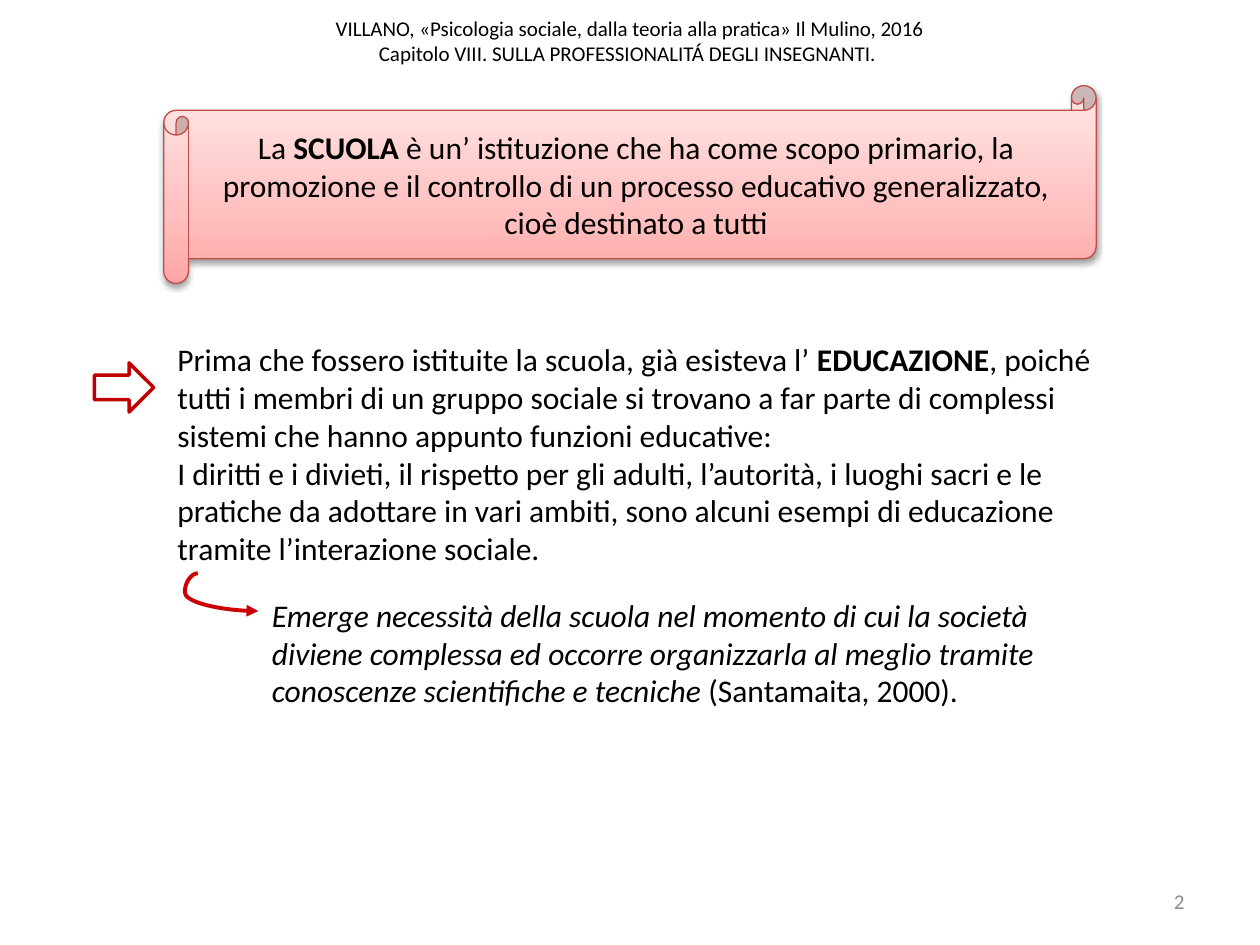
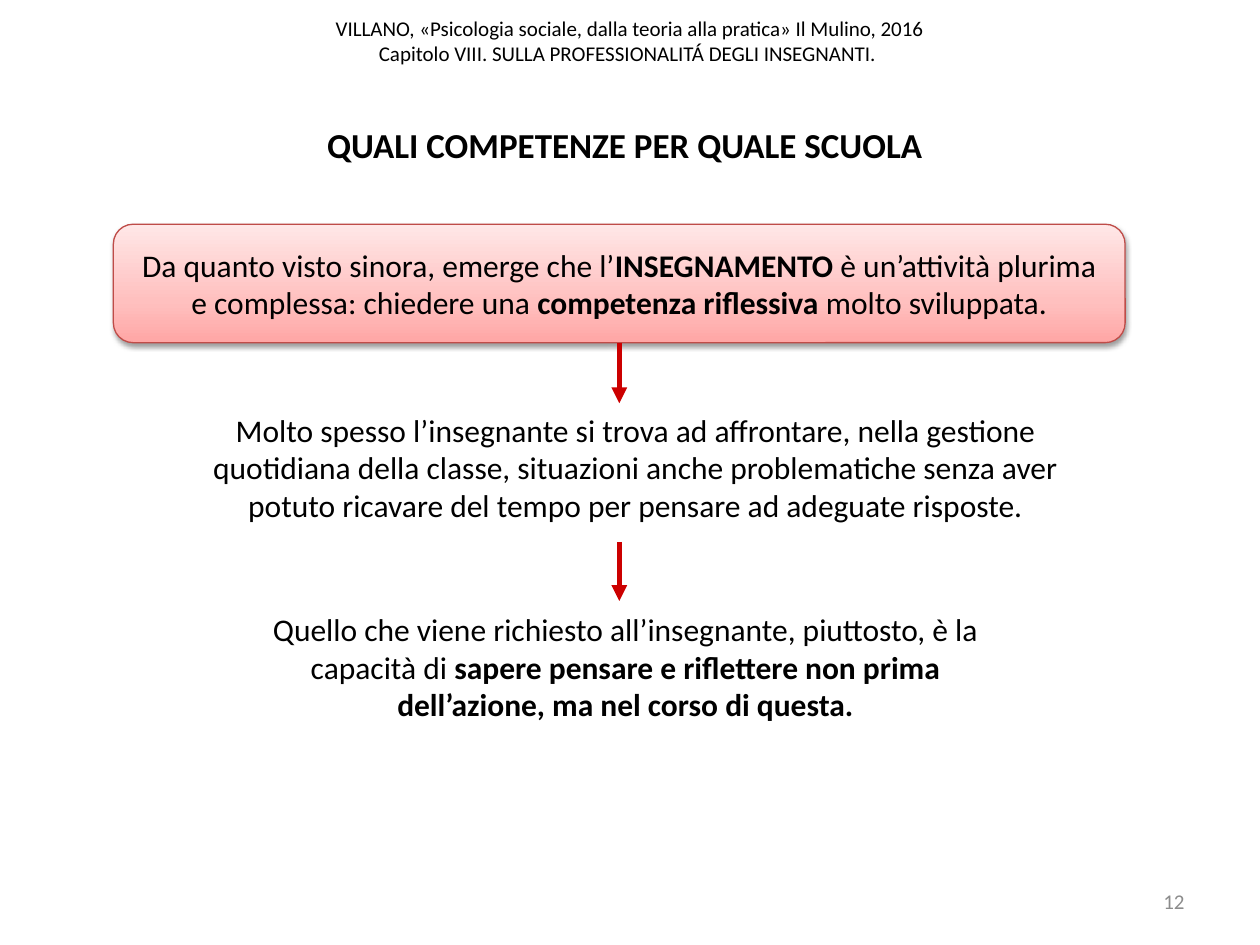
from copy import deepcopy

from pptx import Presentation
from pptx import util as u
from pptx.dml.color import RGBColor
from pptx.enum import shapes, text
from pptx.oxml import parse_xml
from pptx.oxml.ns import nsdecls, qn

BLACK, GREY, RED, DARK_RED, BORDER = "000000", "8C8C8C", "CC0000", "C00000", "BF4C48"
BANNER_STOPS = [(0, "FFA6A5"), (0.35, "FFC0BF"), (1, "FFE7E7")]
LEFT, CENTER, RIGHT = text.PP_ALIGN.LEFT, text.PP_ALIGN.CENTER, text.PP_ALIGN.RIGHT
HEADER = [
    ["VILLANO, «Psicologia sociale, dalla teoria alla pratica» Il Mulino, 2016"],
    ["Capitolo VIII. SULLA PROFESSIONALITÁ DEGLI INSEGNANTI. "],
]

deck = Presentation()
deck.slide_width, deck.slide_height = u.Inches(10), u.Inches(7.5)
# Grid of 100 columns by 75 rows
COL, ROW = deck.slide_width / 100, deck.slide_height / 75


def paint(target, color):
    """Give a fill, line fill or font a solid colour."""
    if hasattr(target, "solid"):
        target.solid()
        target.fore_color.rgb = RGBColor.from_string(color)
    else:
        target.color.rgb = RGBColor.from_string(color)


def write(box, paragraphs, size=18, color=BLACK, align=LEFT, accent="bold", middle=False):
    """Fill a box; every second span of a paragraph carries the accent."""
    frame = box.text_frame
    frame.word_wrap = True
    frame.vertical_anchor = text.MSO_ANCHOR.MIDDLE if middle else text.MSO_ANCHOR.TOP
    for number, spans in enumerate(paragraphs):
        para = frame.add_paragraph() if number else frame.paragraphs[0]
        para.alignment = align
        for index, content in enumerate(spans):
            if content:
                span = para.add_run()
                span.text = content
                span.font.name, span.font.size = "Calibri", u.Pt(size)
                paint(span.font, color)
                if index % 2:
                    setattr(span.font, accent, True)


# Pages with shared header and page number
pages = []
for page_number in ("2", "12"):
    page = deck.slides.add_slide(deck.slide_layouts[6])
    header = page.shapes.add_textbox(0, int(-1.1 * ROW), int(100 * COL), int(8.7 * ROW))
    write(header, HEADER, size=12, align=CENTER, middle=True)
    number_box = page.shapes.add_textbox(
        int(71.7 * COL), int(69.5 * ROW), int(23.3 * COL), int(4 * ROW))
    write(number_box, [[page_number]], size=12, color=GREY, align=RIGHT, middle=True)
    pages.append(page)
school, skills = pages

# Body texts: page, left, top, width, height, paragraphs, format
bodies = [
    (school, 13.1, 26.5, 77, 19.2, [
        ["Prima che fossero istituite la scuola, già esisteva l’ ", "EDUCAZIONE",
         ", poiché tutti i membri di un gruppo sociale si trovano a far parte di complessi "
         "sistemi che hanno appunto funzioni educative:"],
        ["I diritti e i divieti, il rispetto per gli adulti, l’autorità, i luoghi sacri e le "
         "pratiche da adottare in vari ambiti, sono alcuni esempi di educazione tramite "
         "l’interazione sociale."]], {}),
    (school, 20.6, 46.8, 63, 10.1, [
        ["", "Emerge necessità della scuola nel momento di cui la società diviene complessa ed "
         "occorre organizzarla al meglio tramite conoscenze scientifiche e tecniche ",
         "(Santamaita, 2000)."]], {"accent": "italic"}),
    (skills, 16.9, 9.3, 65.4, 4.4, [["", "QUALI COMPETENZE PER QUALE SCUOLA"]],
     {"size": 20, "align": CENTER}),
    (skills, 14.6, 32.1, 71.7, 10.1, [
        ["Molto spesso l’insegnante si trova ad affrontare, nella gestione quotidiana della "
         "classe, situazioni anche problematiche senza aver potuto ricavare del tempo per "
         "pensare ad adeguate risposte."]], {"align": CENTER}),
    (skills, 17.9, 47.9, 63.5, 10.1, [
        ["Quello che viene richiesto all’insegnante, piuttosto, è la capacità di ",
         "sapere pensare e riflettere non prima dell’azione, ma nel corso di questa."]],
     {"align": CENTER}),
]
for page, left, top, width, height, paragraphs, style in bodies:
    box = page.shapes.add_textbox(
        int(left * COL), int(top * ROW), int(width * COL), int(height * ROW))
    write(box, paragraphs, **style)
    box.text_frame.auto_size = text.MSO_AUTO_SIZE.SHAPE_TO_FIT_TEXT

# Pink banners with gradient and soft shadow
banners = [
    (school, shapes.MSO_SHAPE.HORIZONTAL_SCROLL, 13, 6.8, 74, 15.7, [
        "La ", "SCUOLA", " è un’ istituzione che ha come scopo primario, la promozione e il "
        "controllo di un processo educativo generalizzato, cioè destinato a tutti"]),
    (skills, shapes.MSO_SHAPE.ROUNDED_RECTANGLE, 9, 17.8, 80.3, 9.4, [
        "Da quanto visto sinora, emerge che l’", "INSEGNAMENTO",
        " è un’attività plurima e complessa: chiedere una ", "competenza riflessiva ",
        "molto sviluppata."]),
]
for page, kind, left, top, width, height, spans in banners:
    banner = page.shapes.add_shape(
        kind, int(left * COL), int(top * ROW), int(width * COL), int(height * ROW))
    banner.fill.gradient()
    banner.fill.gradient_angle = 90
    stop_list = banner._element.spPr.find(qn("a:gradFill")).find(qn("a:gsLst"))
    stop_list.append(deepcopy(stop_list[0]))
    for stop, (position, color) in zip(banner.fill.gradient_stops, BANNER_STOPS):
        stop.position = position
        paint(stop, color)
    paint(banner.line.fill, BORDER)
    banner.line.width = u.Pt(0.75)
    banner.shadow.inherit = False
    banner._element.spPr.find(qn("a:effectLst")).append(parse_xml(
        f'<a:outerShdw {nsdecls("a")} blurRad="40000" dist="20000" dir="5400000" '
        'rotWithShape="0"><a:srgbClr val="000000"><a:alpha val="38000"/></a:srgbClr>'
        '</a:outerShdw>'))
    write(banner, [spans], align=CENTER, middle=True)

# Outlined block arrow beside the first text
pointer = school.shapes.add_shape(
    shapes.MSO_SHAPE.RIGHT_ARROW, int(7.5 * COL), int(28.8 * ROW), int(4.7 * COL), int(3.9 * ROW))
pointer.fill.background()
paint(pointer.line.fill, DARK_RED)
pointer.line.width = u.Pt(2)
pointer.shadow.inherit = False

# Red arrows: page, kind, start, end, weight
STRAIGHT, CURVE = shapes.MSO_CONNECTOR.STRAIGHT, shapes.MSO_CONNECTOR.CURVE
arrows = [
    (school, CURVE, 15.7, 45.5, 20.5, 48.5, 2.25),
    (skills, STRAIGHT, 49.15, 27.2, 49.15, 32, 3),
    (skills, STRAIGHT, 49.15, 43, 49.15, 47.7, 3),
]
links = []
for page, kind, x1, y1, x2, y2, weight in arrows:
    link = page.shapes.add_connector(
        kind, int(x1 * COL), int(y1 * ROW), int(x2 * COL), int(y2 * ROW))
    paint(link.line.fill, RED)
    link.line.width = u.Pt(weight)
    link.line._get_or_add_ln().append(parse_xml(f'<a:tailEnd {nsdecls("a")} type="triangle"/>'))
    link._element.spPr.append(parse_xml(f'<a:effectLst {nsdecls("a")}/>'))
    links.append(link)
links[1].begin_connect(banner, 2)

# Bend of the curved arrow, out to the left of its start
geometry = links[0]._element.spPr.find(qn("a:prstGeom"))
for guides in geometry.findall(qn("a:avLst")):
    geometry.remove(guides)
geometry.append(parse_xml(
    f'<a:avLst {nsdecls("a")}><a:gd name="adj1" fmla="val -21700"/></a:avLst>'))

deck.save("out.pptx")
